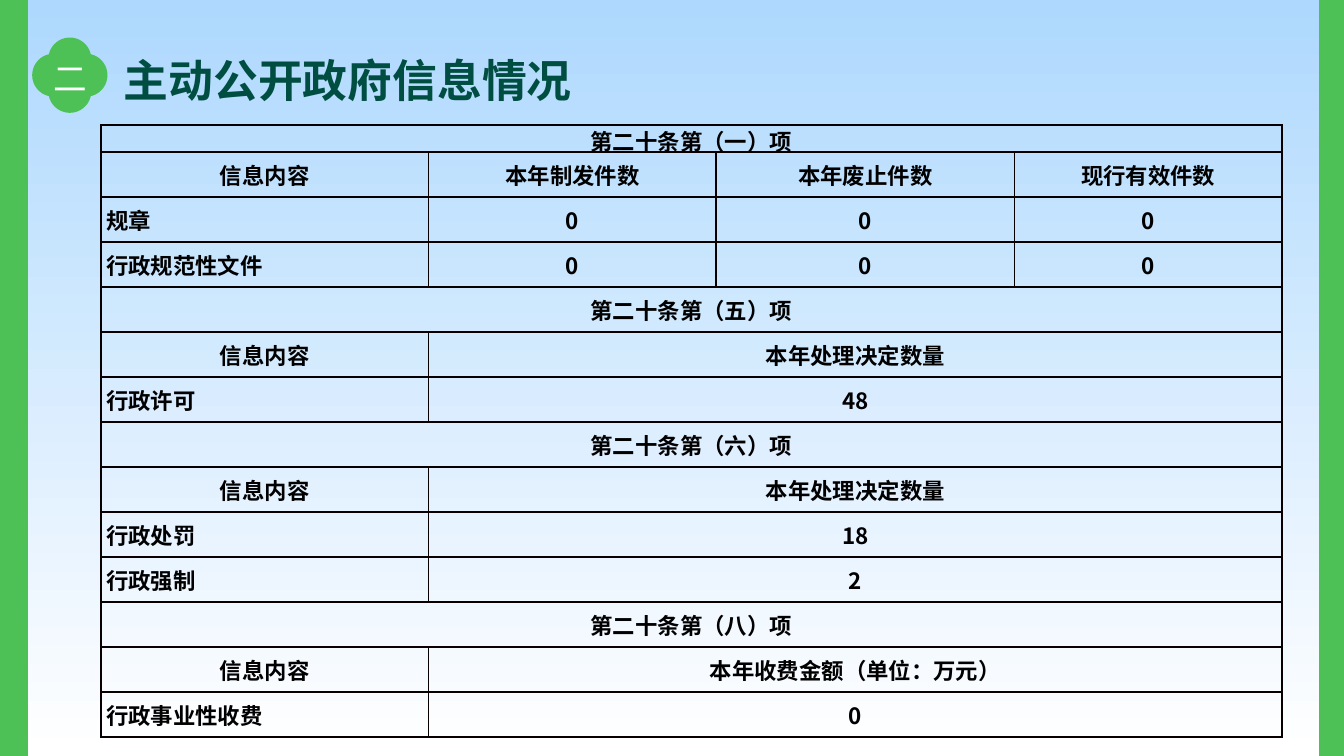
import math
from dataclasses import dataclass

import pptx
import pptx.util
from lxml import etree
from pptx.dml.color import RGBColor
from pptx.enum.shapes import MSO_SHAPE
from pptx.enum.text import MSO_ANCHOR, PP_ALIGN
from pptx.oxml.ns import qn
from pptx.util import Inches, Pt


@dataclass(frozen=True)
class Theme:
    green: RGBColor = RGBColor.from_string("4DC156")
    title: RGBColor = RGBColor.from_string("004E42")
    sky: RGBColor = RGBColor.from_string("AED8FE")
    white: RGBColor = RGBColor.from_string("FFFFFF")
    black: RGBColor = RGBColor.from_string("000000")
    border: str = "080000"
    font: str = "Noto Sans CJK SC"
    numeral_font: str = "Noto Sans CJK JP"
    title_size: int = 24
    numeral_size: int = 18
    table_size: int = 12


THEME = Theme()
SLIDE_WIDTH = Inches(10)
SLIDE_HEIGHT = SLIDE_WIDTH * 9 // 16
HEADING = "信息内容"
DECISIONS = "本年处理决定数量"
COLUMN_WIDTHS = (2.44, 2.14, 2.22, 1.99)
TABLE_HEIGHT, FIRST_ROW_HEIGHT = 4.56, 0.2

# The last entry of each row spans the columns that remain.
ROWS = (
    ("第二十条第（一）项",),
    (HEADING, "本年制发件数", "本年废止件数", "现行有效件数"),
    ("规章", "0", "0", "0"),
    ("行政规范性文件", "0", "0", "0"),
    ("第二十条第（五）项",),
    (HEADING, DECISIONS),
    ("行政许可", "48"),
    ("第二十条第（六）项",),
    (HEADING, DECISIONS),
    ("行政处罚", "18"),
    ("行政强制", "2"),
    ("第二十条第（八）项",),
    (HEADING, "本年收费金额（单位：万元）"),
    ("行政事业性收费", "0"),
)


def style_paragraph(paragraph, size, color, font_name, bold=False, align=PP_ALIGN.CENTER):
    paragraph.alignment = align
    font = paragraph.font
    font.size, font.bold, font.name = Pt(size), bold, font_name
    font.color.rgb = color
    properties = paragraph._p.pPr.find(qn("a:defRPr"))
    etree.SubElement(properties, qn("a:ea")).set("typeface", font_name)


def paint_background(slide):
    fill = slide.background.fill
    fill.gradient()
    fill.gradient_angle = 270
    for stop, color in zip(fill.gradient_stops, (THEME.sky, THEME.white)):
        stop.color.rgb = color


def add_side_band(slide, left):
    band = slide.shapes.add_shape(
        MSO_SHAPE.RECTANGLE, Inches(left), 0, Inches(0.2), SLIDE_HEIGHT)
    band.shadow.inherit = False
    band.fill.solid()
    band.fill.fore_color.rgb = THEME.green
    band.line.color.rgb = THEME.green
    band.line.width = Pt(1)


def set_title(slide, text):
    title = slide.shapes.title
    title.left, title.top = Inches(0.82), Inches(0.34)
    title.width, title.height = Inches(3.67), Inches(0.5)
    frame = title.text_frame
    frame.text = text
    frame.word_wrap = False
    frame.vertical_anchor = MSO_ANCHOR.TOP
    style_paragraph(frame.paragraphs[0], THEME.title_size, THEME.title,
                    THEME.font, bold=True, align=PP_ALIGN.LEFT)


def clover_outline(center_x, center_y, offset, radius, steps=120):
    """Outline of four overlapping circles set around a centre."""
    points = []
    for step in range(steps):
        angle = 2 * math.pi * step / steps
        from_axis = (angle + math.pi / 4) % (math.pi / 2) - math.pi / 4
        reach = offset * math.cos(from_axis) + math.sqrt(
            radius ** 2 - (offset * math.sin(from_axis)) ** 2)
        points.append((Inches(center_x + reach * math.cos(angle)),
                       Inches(center_y + reach * math.sin(angle))))
    return points


def add_section_badge(slide, numeral):
    badge = slide.shapes.add_group_shape()
    start, *rest = clover_outline(0.52, 0.56, offset=0.12, radius=0.16)
    builder = badge.shapes.build_freeform(*start)
    builder.add_line_segments(rest, close=True)
    clover = builder.convert_to_shape()
    clover.shadow.inherit = False
    clover.fill.solid()
    clover.fill.fore_color.rgb = THEME.green
    clover.line.fill.background()

    label = badge.shapes.add_textbox(
        Inches(0.3), Inches(0.38), Inches(0.45), Inches(0.4))
    frame = label.text_frame
    frame.word_wrap = True
    frame.text = numeral
    style_paragraph(frame.paragraphs[0], THEME.numeral_size, THEME.white,
                    THEME.numeral_font)


def set_borders(cell):
    properties = cell._tc.get_or_add_tcPr()
    for position, side in enumerate(("a:lnL", "a:lnR", "a:lnT", "a:lnB")):
        line = etree.Element(qn(side), w=str(Pt(1)))
        fill = etree.SubElement(line, qn("a:solidFill"))
        etree.SubElement(fill, qn("a:srgbClr"), val=THEME.border)
        properties.insert(position, line)


def style_cell(cell, align):
    cell.fill.background()
    cell.vertical_anchor = MSO_ANCHOR.MIDDLE
    cell.margin_left = cell.margin_right = Inches(0.04)
    cell.margin_top = cell.margin_bottom = 0
    style_paragraph(cell.text_frame.paragraphs[0], THEME.table_size,
                    THEME.black, THEME.font, bold=True, align=align)
    set_borders(cell)


def add_disclosure_table(slide):
    table = slide.shapes.add_table(
        len(ROWS), len(COLUMN_WIDTHS), Inches(0.75), Inches(0.93),
        Inches(sum(COLUMN_WIDTHS)), Inches(TABLE_HEIGHT)).table
    table.first_row = table.horz_banding = False
    for column, width in zip(table.columns, COLUMN_WIDTHS):
        column.width = Inches(width)

    row_height = (TABLE_HEIGHT - FIRST_ROW_HEIGHT) / (len(ROWS) - 1)
    last_column = len(COLUMN_WIDTHS) - 1
    for row_index, entries in enumerate(ROWS):
        table.rows[row_index].height = Inches(row_height if row_index else FIRST_ROW_HEIGHT)
        for column_index, entry in enumerate(entries):
            table.cell(row_index, column_index).text = entry
        is_item = len(entries) > 1 and entries[0] != HEADING
        for column_index in range(len(COLUMN_WIDTHS)):
            align = PP_ALIGN.LEFT if is_item and column_index == 0 else PP_ALIGN.CENTER
            style_cell(table.cell(row_index, column_index), align)
        if len(entries) <= last_column:
            table.cell(row_index, len(entries) - 1).merge(
                table.cell(row_index, last_column))


def main():
    presentation = pptx.Presentation()
    presentation.slide_width = SLIDE_WIDTH
    presentation.slide_height = SLIDE_HEIGHT
    slide = presentation.slides.add_slide(presentation.slide_layouts[5])
    paint_background(slide)
    for left in (0, 9.82):
        add_side_band(slide, left)
    set_title(slide, "主动公开政府信息情况")
    add_section_badge(slide, "二")
    add_disclosure_table(slide)
    presentation.save("out.pptx")


if __name__ == "__main__":
    main()
